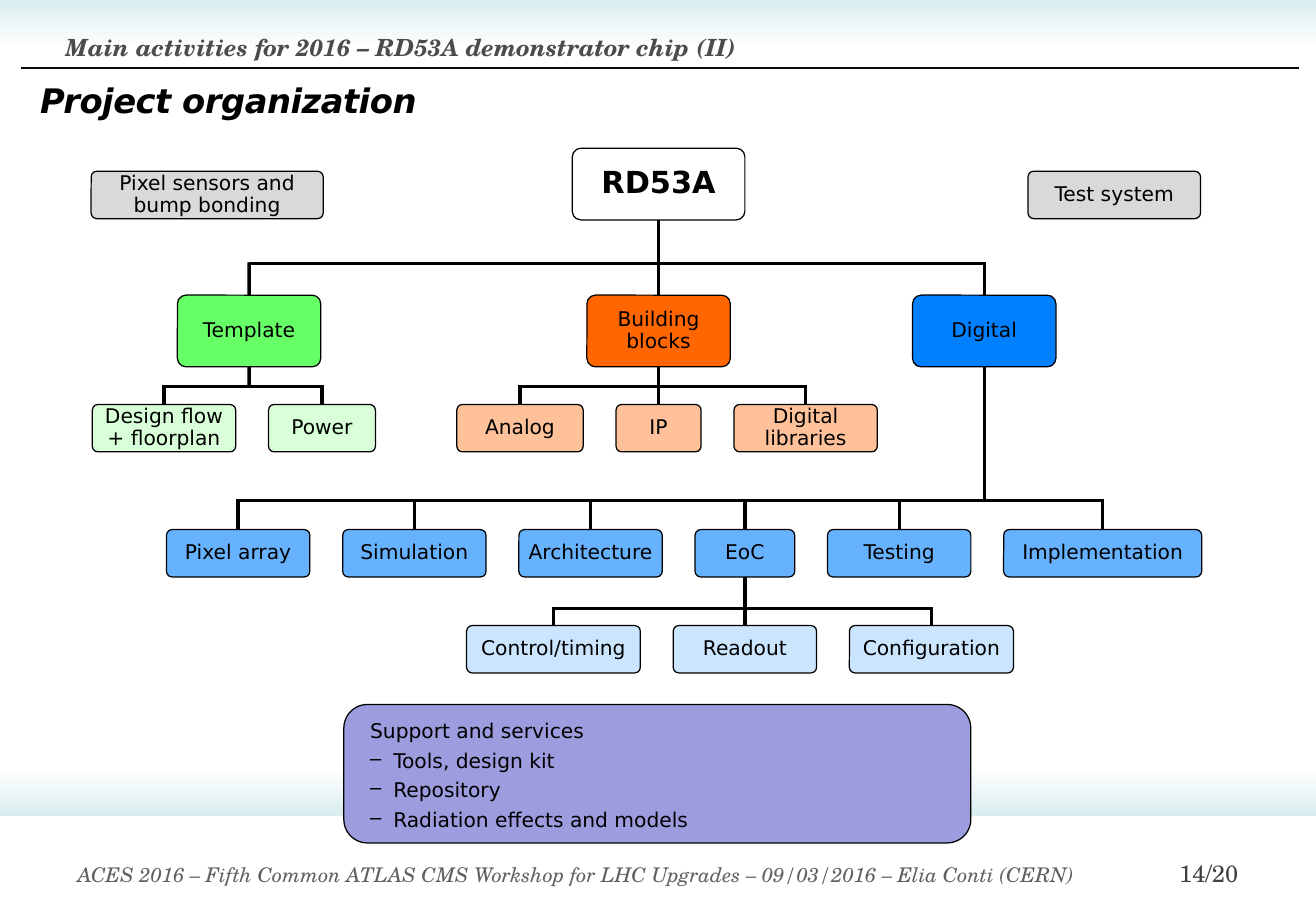
"""Draws the project organization chart of the RD53A demonstrator chip."""
import lxml.etree
import pptx
import pptx.dml.color
import pptx.enum.dml
import pptx.enum.shapes
import pptx.enum.text
import pptx.oxml.ns
import pptx.util

RGB = pptx.dml.color.RGBColor
BLACK = RGB(0x00, 0x00, 0x00)
INK = RGB(0x0B, 0x0B, 0x0B)
WHITE = RGB(0xFF, 0xFF, 0xFF)
SMOKE = RGB(0x60, 0x60, 0x60)
GREY = RGB(0xD9, 0xD9, 0xD9)
MIST = RGB(0xDA, 0xED, 0xEF)
GREEN = RGB(0x66, 0xFF, 0x66)
ORANGE = RGB(0xFF, 0x66, 0x00)
BLUE = RGB(0x00, 0x80, 0xFF)
VIOLET = RGB(0x9C, 0x9C, 0xDF)

SANS, SERIF = "DejaVu Sans", "TeX Gyre Schola"
WIDE, TALL = 10.83, 7.5
TEAM, HIGH, LOW, GAP = 1.18, 0.59, 0.39, 0.27

inch, points, qn = pptx.util.Inches, pptx.util.Pt, pptx.oxml.ns.qn
ALIGN = pptx.enum.text.PP_ALIGN
ANCHOR = pptx.enum.text.MSO_ANCHOR
KIND = pptx.enum.shapes.MSO_SHAPE

deck = pptx.Presentation()
deck.slide_width, deck.slide_height = inch(WIDE), inch(TALL)
shapes = deck.slides.add_slide(deck.slide_layouts[6]).shapes


def write(frame, text, color, look, align, alpha=100):
    """Fill a frame with text and set its font."""
    frame.text = text
    for para in frame.paragraphs:
        para.alignment = align
        run = para.runs[0]
        run.font.color.rgb = color
        for key, value in look.items():
            setattr(run.font, key, value)
        if alpha < 100:
            tone = run.font._element.find(".//" + qn("a:srgbClr"))
            lxml.etree.SubElement(tone, qn("a:alpha"), val=str(alpha * 1000))


def rule(left, top, right, bottom, color=BLACK, weight=2):
    """Draw a straight line without a shadow."""
    line = shapes.add_connector(
        pptx.enum.shapes.MSO_CONNECTOR.STRAIGHT,
        inch(left), inch(top), inch(right), inch(bottom))
    line.line.color.rgb = color
    line.line.width = points(weight)
    lxml.etree.SubElement(line._element.spPr, qn("a:effectLst"))
    return line


for top, turn in [(0, 0), (6.32, 180)]:
    band = shapes.add_shape(KIND.RECTANGLE, 0, inch(top), inch(WIDE), inch(0.4))
    band.shadow.inherit = False
    band.line.fill.background()
    band.fill.gradient()
    band.fill.gradient_angle = 270
    for stop, color, place in zip(band.fill.gradient_stops, (MIST, WHITE), (0, 1)):
        stop.color.rgb = color
        stop.position = place
    band.rotation = turn

rule(10.69, 0.56, 0.17, 0.56, INK, 0.75)

serif = {"name": SERIF, "size": points(14)}
labels = [
    (7.76, 6.83, 2.53, 0.52, "14/20", BLACK, serif, ALIGN.RIGHT, 75, ANCHOR.BOTTOM, True),
    (0.44, 0.22, 5.99, 0.34, "Main activities for 2016 – RD53A demonstrator chip (II)",
     BLACK, serif | {"bold": True, "italic": True}, ALIGN.LEFT, 70, ANCHOR.TOP, False),
    (0.54, 6.83, 9.27, 0.52,
     "ACES 2016 – Fifth Common ATLAS CMS Workshop for LHC Upgrades – 09/03/2016 – Elia Conti (CERN)",
     SMOKE, serif | {"size": points(12), "italic": True}, ALIGN.LEFT, 100, ANCHOR.BOTTOM, True),
    (0.24, 0.61, 10.28, 0.43, "Project organization", BLACK,
     {"name": SANS, "size": points(20), "bold": True, "italic": True},
     ALIGN.LEFT, 100, ANCHOR.TOP, True),
]
for left, top, width, height, text, color, look, align, alpha, anchor, wrap in labels:
    frame = shapes.add_textbox(inch(left), inch(top), inch(width), inch(height)).text_frame
    frame.word_wrap = wrap
    frame.vertical_anchor = anchor
    write(frame, text, color, look, align, alpha)
frame.margin_left = frame.margin_right = inch(0.09)
frame.paragraphs[0].runs[0].font._element.set("spc", "-30")

SUPPORT = "Support and services\nTools, design kit\nRepository\nRadiation effects and models"
rows = [
    (0.75, 1.41, LOW, GREY, 100, {"Pixel sensors and bump bonding": 1.91}),
    (8.46, 1.41, LOW, GREY, 100, {"Test system": 1.42}),
    (4.71, 1.22, HIGH, WHITE, 100, {"RD53A": 1.42}),
    (1.46, 2.43, HIGH, GREEN, 100, {"Template": TEAM}),
    (4.83, 2.43, HIGH, ORANGE, 100, {"Building blocks": TEAM}),
    (7.51, 2.43, HIGH, BLUE, 100, {"Digital": TEAM}),
    (0.76, 3.33, LOW, GREEN, 25, {"Design flow + floorplan": TEAM, "Power": 0.88}),
    (3.76, 3.33, LOW, ORANGE, 40, {"Analog": 1.04, "IP": 0.7, "Digital libraries": TEAM}),
    (1.37, 4.36, LOW, BLUE, 60, {"Pixel array": TEAM, "Simulation": TEAM, "Architecture": TEAM,
                                 "EoC": 0.82, "Testing": TEAM, "Implementation": 1.63}),
    (3.84, 5.15, LOW, BLUE, 20, {"Control/timing": 1.43, "Readout": TEAM, "Configuration": 1.35}),
    (2.83, 5.8, 1.14, VIOLET, 100, {SUPPORT: 5.16}),
]
boxes, mids = {}, {}
for left, top, height, color, alpha, names in rows:
    for name, width in names.items():
        box = shapes.add_shape(KIND.ROUNDED_RECTANGLE,
                               inch(left), inch(top), inch(width), inch(height))
        box.adjustments[0] = 0.12
        box.shadow.inherit = False
        box.fill.solid()
        box.fill.fore_color.rgb = color
        if alpha < 100:
            tone = box._element.spPr.find(".//" + qn("a:srgbClr"))
            lxml.etree.SubElement(tone, qn("a:alpha"), val=str(alpha * 1000))
        box.line.color.rgb = BLACK
        box.line.width = points(0.75)
        frame = box.text_frame
        frame.word_wrap = True
        frame.vertical_anchor = ANCHOR.MIDDLE
        for side in ("left", "right", "top", "bottom"):
            setattr(frame, "margin_" + side, inch(0.03))
        main = name == "RD53A"
        look = {"name": SANS, "size": points(18 if main else 12), "bold": main}
        write(frame, name, BLACK, look, ALIGN.CENTER)
        for para in frame.paragraphs:
            para.line_spacing = 0.9
        boxes[name], mids[name] = box, left + width / 2
        left += width + GAP

boxes[SUPPORT].adjustments[0] = 0.17
frame = boxes[SUPPORT].text_frame
frame.vertical_anchor = ANCHOR.TOP
frame.margin_left = frame.margin_right = inch(0.16)
frame.margin_top = frame.margin_bottom = inch(0.08)
for index, para in enumerate(frame.paragraphs):
    para.alignment = ALIGN.LEFT
    para.space_after = points(4.6)
    if index:
        props = para._p.get_or_add_pPr()
        props.set("marL", str(inch(0.19)))
        props.set("indent", str(-inch(0.19)))
        lxml.etree.SubElement(props, qn("a:buChar"), char="–")

tree = [
    ("RD53A", 2.17, ["Template", "Building blocks", "Digital"]),
    ("Template", 3.18, ["Design flow + floorplan", "Power"]),
    ("Building blocks", 3.18, ["Analog", "IP", "Digital libraries"]),
    ("Digital", 4.12, ["Pixel array", "Simulation", "Architecture", "EoC",
                       "Testing", "Implementation"]),
    ("EoC", 5.01, ["Control/timing", "Readout", "Configuration"]),
]
for head, level, parts in tree:
    stem = rule(mids[head], level, mids[head], level)
    stem.begin_connect(boxes[head], 2)
    rule(mids[parts[0]], level, mids[parts[-1]], level)
    for part in parts:
        if abs(mids[part] - mids[head]) < 0.02:
            stem.end_connect(boxes[part], 0)
        else:
            drop = rule(mids[part], level - 0.01, mids[part], level)
            drop.end_connect(boxes[part], 0)

deck.save("out.pptx")
